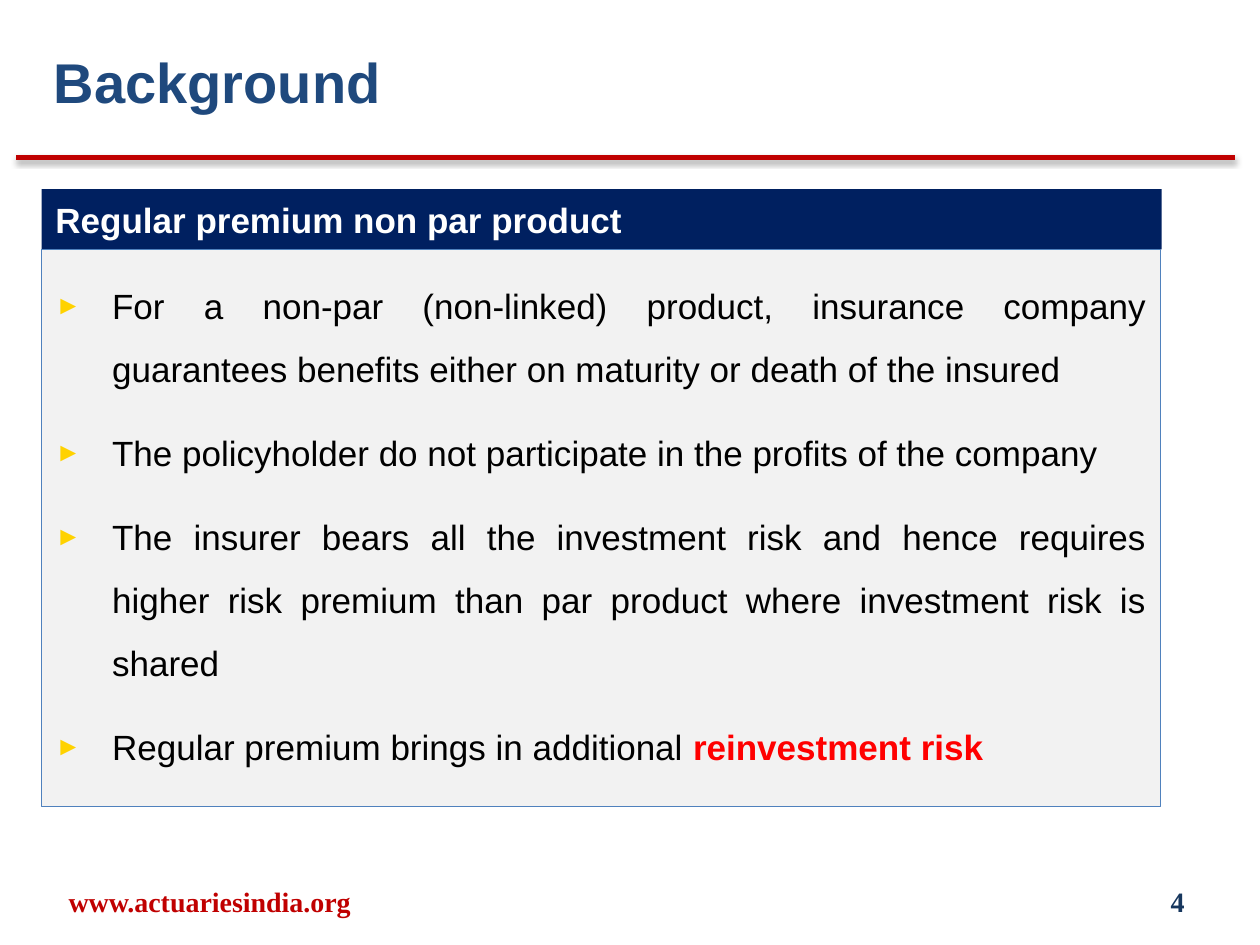
from lxml import etree
from pptx import Presentation
from pptx.dml.color import RGBColor
from pptx.enum import shapes, text
from pptx.oxml import ns
from pptx.util import Inches, Pt

HUES = {
    "red": "C00000", "navy": "002060", "slate": "17375E", "title": "1F497D",
    "white": "FFFFFF", "black": "000000", "panel": "F2F2F2", "edge": "4F81BD",
    "gold": "FFD200", "alert": "FF0000",
}
ALIGN = text.PP_ALIGN
MIDDLE = text.MSO_ANCHOR.MIDDLE

POINTS = [
    [("For a non‐par (non-linked) product, insurance company guarantees "
      "benefits either on maturity or death of the insured", False)],
    [("The policyholder do not participate in the profits of the company",
      False)],
    [("The insurer bears all the investment risk and hence requires higher "
      "risk premium than par product where investment risk is shared", False)],
    [("Regular premium brings in additional ", False),
     ("reinvestment risk", True)],
]


def hue(name):
    return RGBColor.from_string(HUES[name])


def add(parent, tag, **attrs):
    return etree.SubElement(parent, ns.qn(tag), attrs)


class Deck:
    def __init__(self, slide, face="Arial"):
        self.slide = slide
        self.face = face

    def style(self, para, size, color, bold=False, face=None):
        font = para.font
        font.name = face or self.face
        font.size = Pt(size)
        font.bold = bold
        font.color.rgb = hue(color)

    def rule(self, left, right, y, color, width):
        """Draw a horizontal line with a soft shadow below it."""
        line = self.slide.shapes.add_connector(
            shapes.MSO_CONNECTOR.STRAIGHT,
            Inches(left), Inches(y), Inches(right), Inches(y))
        line.line.color.rgb = hue(color)
        line.line.width = Pt(width)
        effects = add(line._element.spPr, "a:effectLst")
        shadow = add(effects, "a:outerShdw", blurRad=str(Pt(3.1)),
                     dist=str(Pt(1.6)), dir="5400000", rotWithShape="0")
        black = add(shadow, "a:srgbClr", val=HUES["black"])
        add(black, "a:alpha", val="38000")

    def label(self, box, words, size, color, align=ALIGN.LEFT,
              anchor=text.MSO_ANCHOR.TOP, face=None):
        shape = self.slide.shapes.add_textbox(*map(Inches, box))
        frame = shape.text_frame
        frame.word_wrap = True
        frame.vertical_anchor = anchor
        para = frame.paragraphs[0]
        para.text = words
        para.alignment = align
        self.style(para, size, color, True, face)

    def block(self, box, fill, edge=None):
        """Draw a filled rectangle and return its text frame."""
        shape = self.slide.shapes.add_shape(
            shapes.MSO_SHAPE.RECTANGLE, *map(Inches, box))
        shape.shadow.inherit = False
        shape.fill.solid()
        shape.fill.fore_color.rgb = hue(fill)
        if edge:
            shape.line.color.rgb = hue(edge)
            shape.line.width = Pt(0.75)
        else:
            shape.line.fill.background()
        frame = shape.text_frame
        frame.word_wrap = True
        frame.margin_left = frame.margin_right = Inches(0.11)
        frame.margin_top = frame.margin_bottom = Inches(0.11)
        return frame

    def header(self, box, words):
        frame = self.block(box, "navy")
        frame.vertical_anchor = MIDDLE
        para = frame.paragraphs[0]
        para.text = words
        para.alignment = ALIGN.LEFT
        self.style(para, 20, "white", True)

    def bullets(self, box, points):
        frame = self.block(box, "panel", "edge")
        frame.vertical_anchor = text.MSO_ANCHOR.TOP
        for i, runs in enumerate(points):
            para = frame.add_paragraph() if i else frame.paragraphs[0]
            para.alignment = ALIGN.JUSTIFY
            para.line_spacing = 1.5
            para.space_after = Pt(12)
            self.mark(para)
            self.style(para, 20, "black")
            for words, strong in runs:
                run = para.add_run()
                run.text = words
                if strong:
                    run.font.bold = True
                    run.font.color.rgb = hue("alert")

    def mark(self, para):
        """Give a paragraph a gold arrow and a hanging indent."""
        props = para._p.get_or_add_pPr()
        props.set("marL", str(Inches(0.45)))
        props.set("indent", str(-Inches(0.45)))
        add(add(props, "a:buClr"), "a:srgbClr", val=HUES["gold"])
        add(props, "a:buSzPct", val="75000")
        add(props, "a:buFont", typeface=self.face)
        add(props, "a:buChar", char="►")


def main():
    show = Presentation()
    show.slide_width, show.slide_height = Inches(10), Inches(7.5)
    deck = Deck(show.slides.add_slide(show.slide_layouts[6]))
    serif = "Times New Roman"

    deck.rule(0.13, 9.8, 1.25, "red", 3)
    deck.label((0.08, 6.95, 3.17, 0.4), "www.actuariesindia.org", 16, "red",
               ALIGN.CENTER, MIDDLE, serif)
    deck.label((7.17, 6.95, 2.33, 0.4), "4", 16, "slate",
               ALIGN.RIGHT, MIDDLE, serif)
    deck.label((0.33, 0.33, 4.75, 0.67), "Background", 32, "title")
    deck.header((0.33, 1.5, 8.89, 0.48), "Regular premium non par product")
    deck.bullets((0.33, 1.98, 8.88, 4.42), POINTS)
    show.save("out.pptx")


if __name__ == "__main__":
    main()
